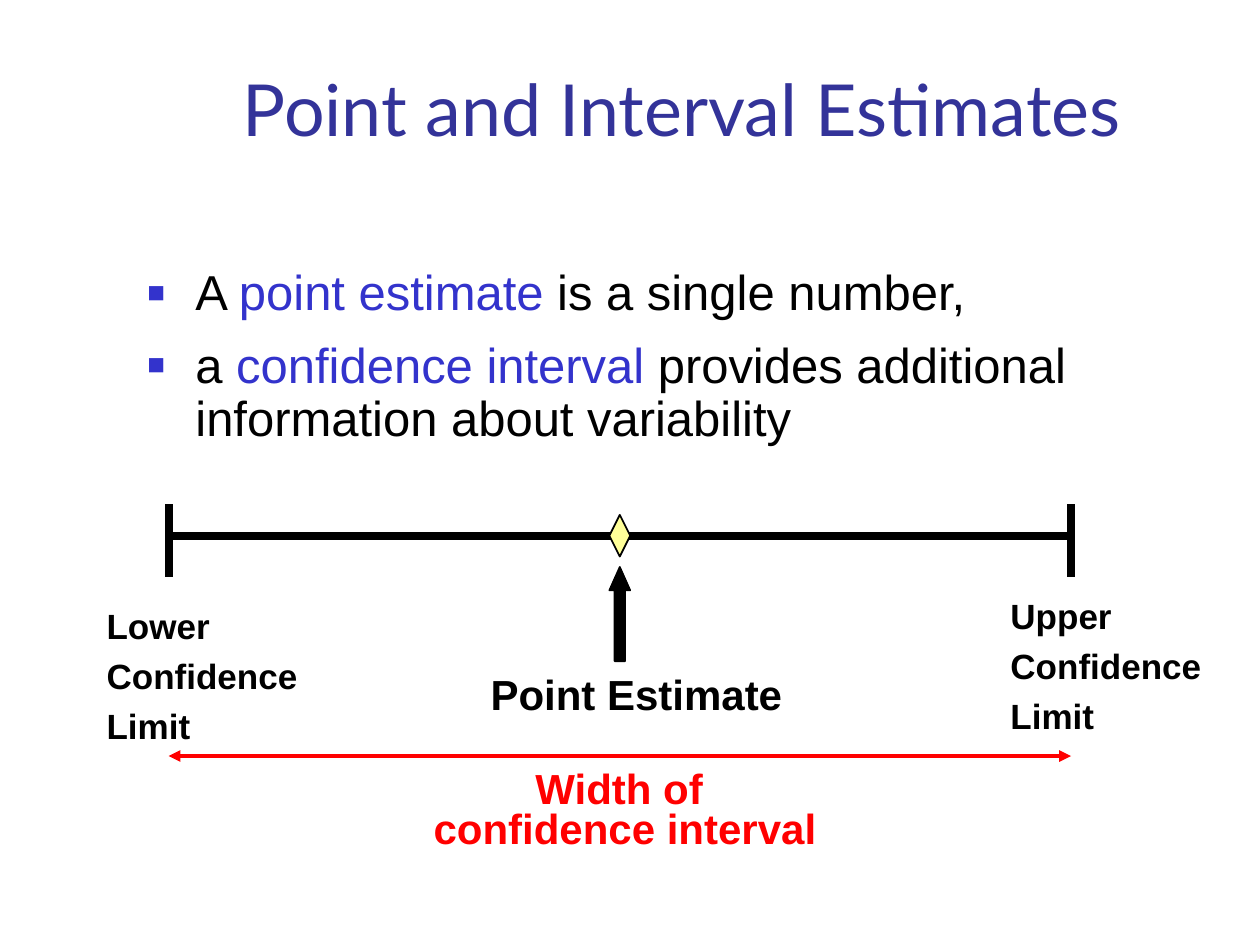
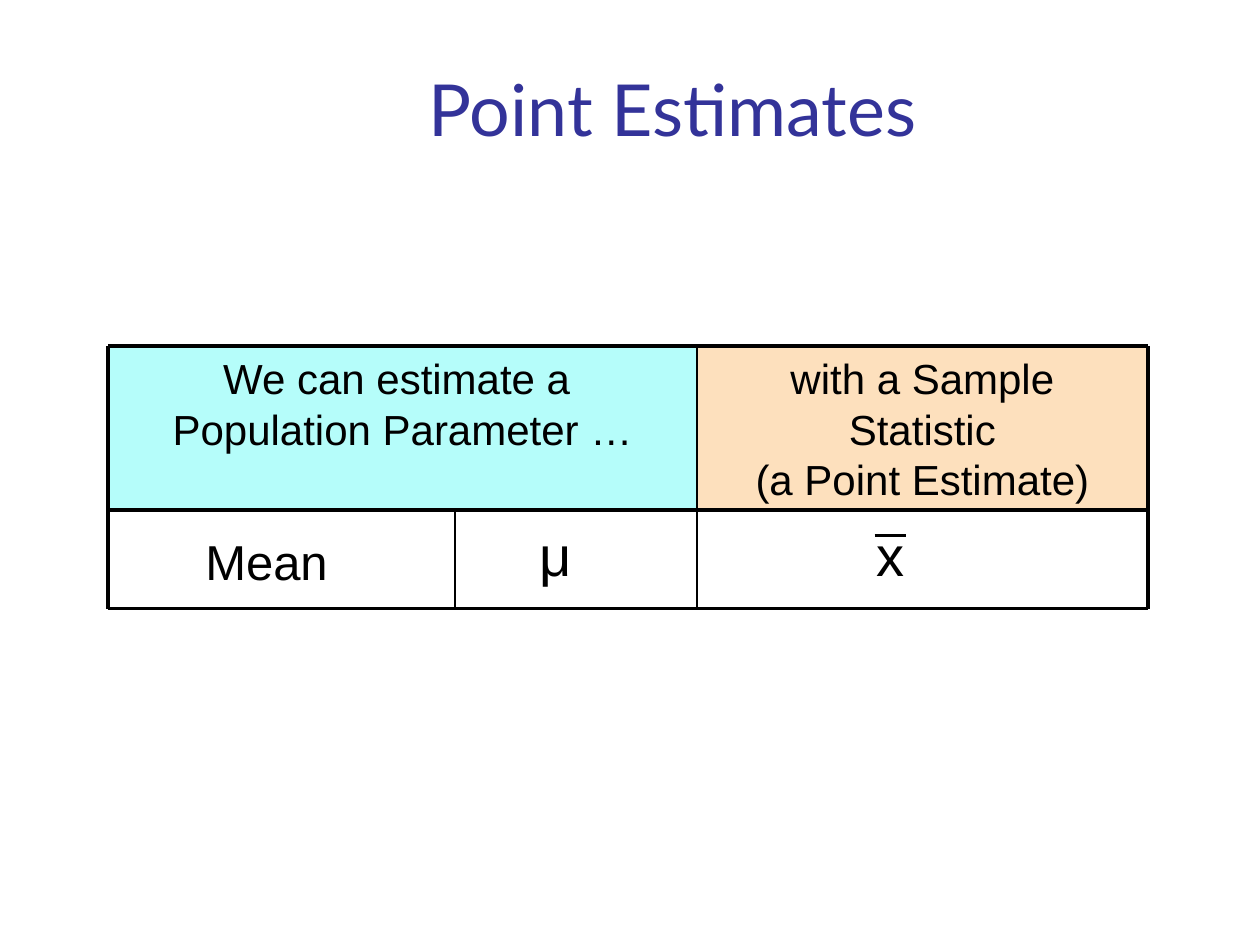
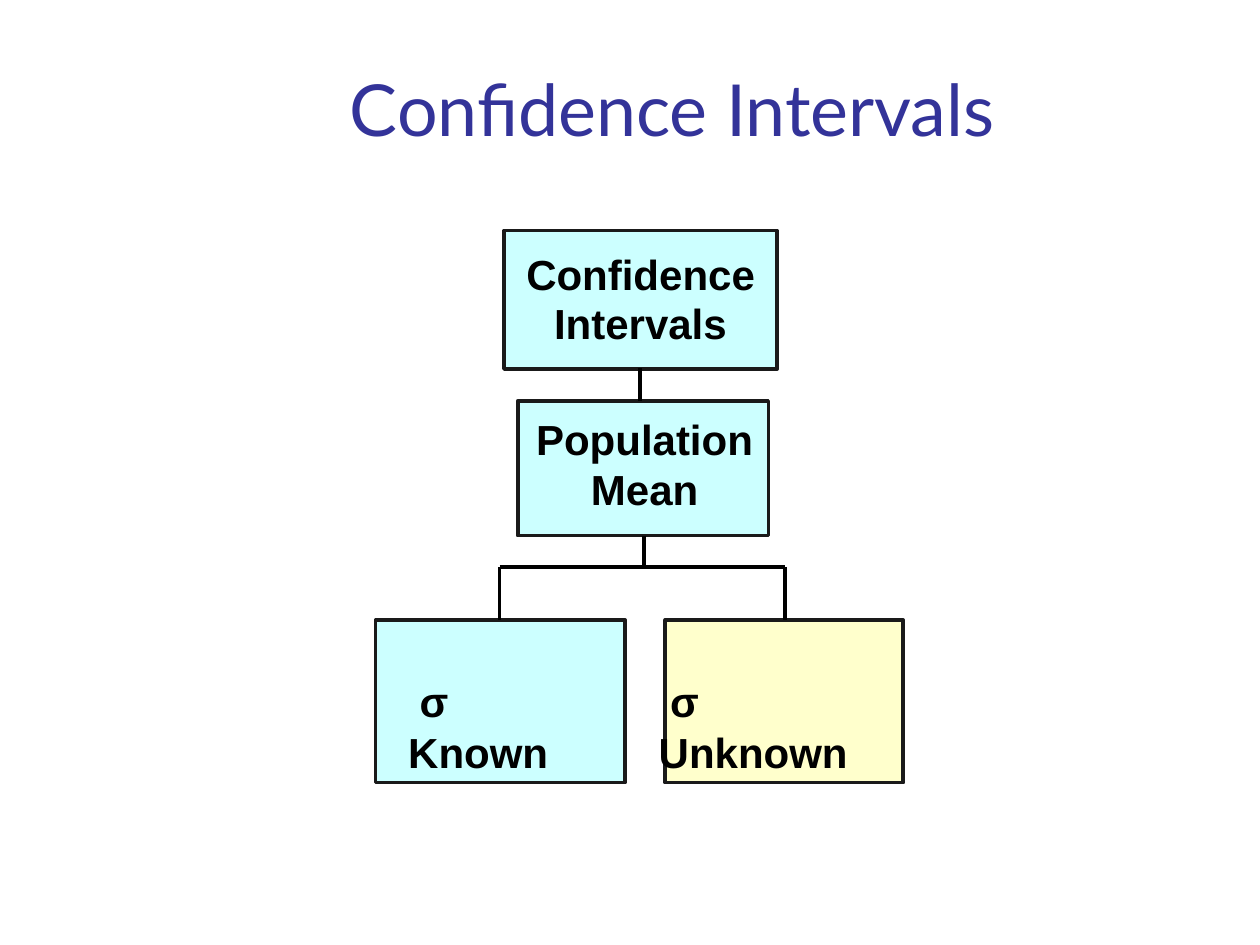
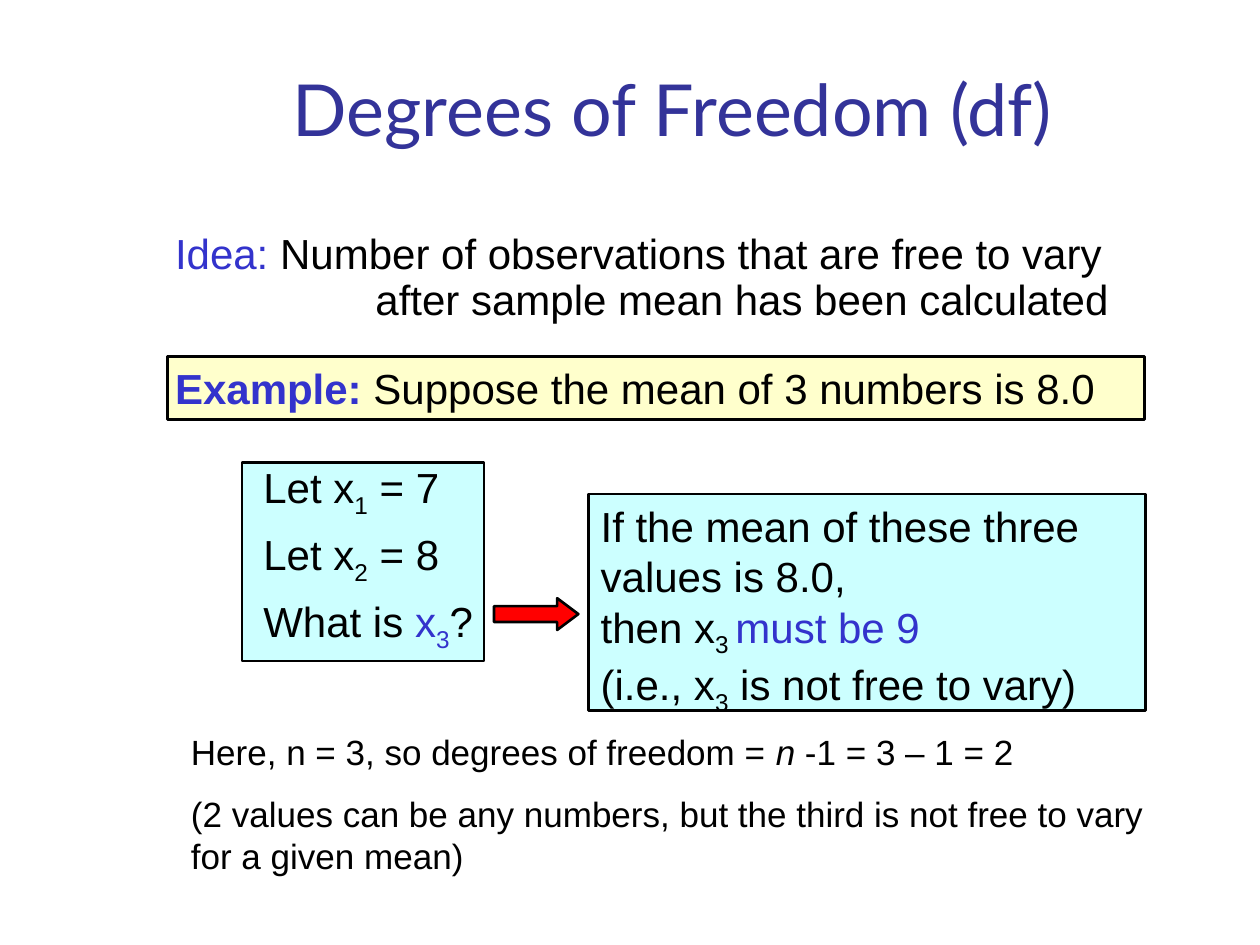
from lxml import etree
from pptx import Presentation
from pptx.dml.color import RGBColor
from pptx.enum.shapes import MSO_CONNECTOR, MSO_SHAPE as SHAPE
from pptx.enum.text import MSO_ANCHOR as ANCHOR, PP_ALIGN as ALIGN
from pptx.oxml.ns import qn
from pptx.util import Cm, Pt

BLACK = RGBColor(0x00, 0x00, 0x00)
CHARCOAL = RGBColor(0x1A, 0x1A, 0x1A)
NAVY = RGBColor(0x33, 0x33, 0x99)
BLUE = RGBColor(0x33, 0x33, 0xCC)
RED = RGBColor(0xFF, 0x00, 0x00)
YELLOW = RGBColor(0xFF, 0xFF, 0x99)
CREAM = RGBColor(0xFF, 0xFF, 0xCC)
CYAN = RGBColor(0xCC, 0xFF, 0xFF)
AQUA = RGBColor(0xB5, 0xFD, 0xFA)
PEACH = RGBColor(0xFD, 0xE0, 0xBD)

BODY_FONT = "Arial"
TITLE_FONT = "Lato"
TIGHT = (0.23, 0.13)
NORMAL = (0.25, 0.13)
TITLE_BOX = (2.74, 1.07, 21.64, 2.11)


def format_run(r, size, color, bold=False, italic=False, font=BODY_FONT, sub=False):
    r.font.name = font
    r.font.size = Pt(size)
    r.font.bold = bold
    r.font.italic = italic
    r.font.color.rgb = color
    if sub:
        r.font._element.set("baseline", "-25000")


def write(tf, paragraphs, size, align=ALIGN.LEFT, before=0, insets=NORMAL, **style):
    style = {"color": BLACK, **style}
    tf.word_wrap = True
    tf.vertical_anchor = ANCHOR.TOP
    tf.margin_left = tf.margin_right = Cm(insets[0])
    tf.margin_top = tf.margin_bottom = Cm(insets[1])
    for i, content in enumerate(paragraphs):
        p = tf.add_paragraph() if i else tf.paragraphs[0]
        p.alignment = align
        if i and before:
            p.space_before = Pt(before)
        if isinstance(content, str):
            p.text = content
            for r in p.runs:
                format_run(r, size, **style)
            continue
        for text, changes in content:
            r = p.add_run()
            r.text = text
            format_run(r, size, **{**style, **changes})
    return tf


def add_text(slide, box, paragraphs, size, **options):
    sp = slide.shapes.add_textbox(*map(Cm, box))
    return write(sp.text_frame, paragraphs, size, **options)


def add_title(slide, text, box=TITLE_BOX):
    tf = add_text(slide, box, [text], 41, align=ALIGN.CENTER, insets=TIGHT,
                  color=NAVY, font=TITLE_FONT)
    tf.vertical_anchor = ANCHOR.BOTTOM


def add_figure(slide, kind, box, fill, line=BLACK, width=1.5, adjustments=()):
    sp = slide.shapes.add_shape(kind, *map(Cm, box))
    sp.shadow.inherit = False
    sp.fill.solid()
    sp.fill.fore_color.rgb = fill
    if line is None:
        sp.line.fill.background()
    else:
        sp.line.color.rgb = line
        sp.line.width = Pt(width)
    for i, value in enumerate(adjustments):
        sp.adjustments[i] = value
    return sp


def add_line(slide, x1, y1, x2, y2, width, color=BLACK, arrows=False):
    line = slide.shapes.add_connector(MSO_CONNECTOR.STRAIGHT, *map(Cm, (x1, y1, x2, y2)))
    line.line.color.rgb = color
    line.line.width = Pt(width)
    if arrows:
        ln = line.line._get_or_add_ln()
        for tag in ("a:headEnd", "a:tailEnd"):
            etree.SubElement(ln, qn(tag), type="triangle")
    etree.SubElement(line._element.spPr, qn("a:effectLst"))


def set_indent(p, left, first=0):
    pPr = p._p.get_or_add_pPr()
    pPr.set("marL", str(Cm(left)))
    pPr.set("indent", str(Cm(first)))
    return pPr


def add_bullet(p):
    pPr = set_indent(p, 0.97, -0.97)
    color = etree.SubElement(pPr, qn("a:buClr"))
    etree.SubElement(color, qn("a:srgbClr"), val=str(BLUE))
    etree.SubElement(pPr, qn("a:buSzPct"), val="60000")
    etree.SubElement(pPr, qn("a:buFont"), typeface=BODY_FONT)
    etree.SubElement(pPr, qn("a:buChar"), char="■")


def build_interval_slide(slide):
    lower, upper, axis_y, width_y = 3.4, 21.59, 10.8, 15.24
    middle = (lower + upper) / 2
    add_title(slide, "Point and Interval Estimates", (4.44, 1.07, 18.62, 2.11))
    blue = {"color": BLUE}
    tf = add_text(slide, (2.74, 5.28, 21.39, 3.61), [
        [("A ", {}), ("point estimate", blue), (" is a single number,", {})],
        [("a ", {}), ("confidence interval", blue),
         (" provides additional information about variability", {})],
    ], 28, insets=TIGHT, before=11.3)
    for p in tf.paragraphs:
        add_bullet(p)
        p.line_spacing = 0.9

    add_line(slide, lower, axis_y, upper, axis_y, 4.5)
    for x in (lower, upper):
        add_line(slide, x, 10.16, x, 11.63, 4.5)
    add_figure(slide, SHAPE.DIAMOND, (middle - 0.21, 10.38, 0.42, 0.84), YELLOW, width=1)
    add_figure(slide, SHAPE.UP_ARROW, (middle - 0.21, 11.43, 0.42, 1.9), BLACK, width=1,
               adjustments=(0.5, 1.125))
    add_text(slide, (7.85, 13.34, 9.96, 1.27), ["Point Estimate"], 24,
             align=ALIGN.CENTER, bold=True)
    for name, x, y in (("Lower", 1.9, 12.06), ("Upper", 20.12, 11.86)):
        add_text(slide, (x, y, 4.75, 3.12), [name, "Confidence", "Limit"], 20,
                 before=4.6, bold=True)
    add_line(slide, lower, width_y, upper, width_y, 2.25, RED, arrows=True)
    tf = add_text(slide, (7.62, width_y, 9.96, 1.88), ["Width of ", "confidence interval"], 24,
                  align=ALIGN.CENTER, before=16, color=RED, bold=True)
    tf.paragraphs[1].line_spacing = 0.1


def build_estimates_slide(slide):
    left, symbol_x, statistic_x, right = 2.18, 9.17, 14.05, 23.14
    top, header_bottom, bottom = 6.98, 10.28, 12.27
    add_title(slide, "Point Estimates")
    headers = (
        (left, statistic_x, AQUA, ["We can estimate a ", "Population Parameter …"]),
        (statistic_x, right, PEACH, ["with a Sample\vStatistic", "(a Point Estimate)"]),
    )
    for x1, x2, fill, paragraphs in headers:
        sp = add_figure(slide, SHAPE.RECTANGLE, (x1, top, x2 - x1, header_bottom - top),
                        fill, line=None)
        write(sp.text_frame, paragraphs, 24, align=ALIGN.CENTER)

    for y in (top, header_bottom, bottom):
        add_line(slide, left, y, right, y, 2)
    for x, y, width in ((left, top, 2.25), (symbol_x, header_bottom, 1.5),
                        (statistic_x, top, 1.5), (right, top, 2.25)):
        add_line(slide, x, y, x, bottom, width)
    add_text(slide, (3.89, 10.59, 3.3, 1.42), ["Mean"], 28)
    add_text(slide, (10.36, 10.36, 1.7, 1.6), ["μ"], 32, align=ALIGN.CENTER)
    add_text(slide, (17.42, 10.36, 1.3, 1.6), ["x"], 32)
    add_line(slide, 17.63, 10.8, 18.26, 10.8, 1.5)


def build_tree_slide(slide):
    fork_y, leaf_y = 11.43, 12.5
    known_x, unknown_x = 10.07, 15.82
    add_title(slide, "Confidence Intervals")
    nodes = (
        ((10.16, 4.65, 5.51, 2.79), CYAN),
        ((10.44, 8.08, 5.05, 2.72), CYAN),
        ((7.57, leaf_y, 5.03, 3.28), CYAN),
        ((13.41, leaf_y, 4.8, 3.28), CREAM),
    )
    for box, fill in nodes:
        add_figure(slide, SHAPE.RECTANGLE, box, fill, CHARCOAL, 2)

    add_text(slide, (10.36, 4.88, 5.4, 1.27), ["Confidence"], 24, bold=True)
    add_text(slide, (10.92, 5.87, 4.3, 1.27), ["Intervals"], 24, bold=True)
    add_text(slide, (10.44, 8.2, 5.11, 2.29), ["Population", "Mean"], 24,
             align=ALIGN.CENTER, bold=True)
    for x, width, label in ((7.98, 4.37, "σ\vKnown"), (13.03, 5.36, "σ\vUnknown")):
        tf = add_text(slide, (x, 13.49, width, 1.27), [label], 24, bold=True)
        set_indent(tf.paragraphs[0], 0, 0.23)

    for x1, y1, x2, y2 in (
        (12.91, 7.42, 12.91, 8.08),
        (12.98, 10.8, 12.98, fork_y),
        (known_x, fork_y, unknown_x, fork_y),
        (known_x, fork_y, known_x, leaf_y),
        (unknown_x, fork_y, unknown_x, leaf_y),
    ):
        add_line(slide, x1, y1, x2, y2, 2.25)


def build_freedom_slide(slide):
    blue, sub = {"color": BLUE}, {"sub": True}
    sp = add_figure(slide, SHAPE.RECTANGLE, (11.86, 9.96, 11.23, 4.37), CYAN)
    write(sp.text_frame, [
        "If the mean of these three values is 8.0,",
        [("then x", {}), ("3 ", sub), ("must be 9", blue)],
        [("(i.e., x", {}), ("3", sub), (" is not free to vary)", {})],
    ], 24)
    add_figure(slide, SHAPE.RECTANGLE, (4.88, 9.32, 4.88, 4.01), CYAN)
    add_figure(slide, SHAPE.RECTANGLE, (3.38, 7.19, 19.69, 1.27), CREAM)
    add_title(slide, "Degrees of Freedom (df)")

    tf = add_text(slide, (2.11, 4.45, 22.43, 9.53), [
        [("Idea:", blue), (" Number of observations that are free to vary", {})],
        "after sample mean has been calculated",
        [("Example: ", {**blue, "bold": True}), ("Suppose the mean of 3 numbers is 8.0", {})],
        [("Let x", {}), ("1", sub), (" = 7", {})],
        [("Let x", {}), ("2", sub), (" = 8", {})],
        [("What is", {}), (" x", blue), ("3", {**blue, **sub}), ("?", {})],
    ], 24, insets=TIGHT, before=5.5)
    for p, left in zip(tf.paragraphs, (1.19, 5.23, 1.19, 2.97, 2.97, 2.97)):
        set_indent(p, left)
    idea_end, example, first_value = tf.paragraphs[1:4]
    idea_end.line_spacing = 0.7
    example.line_spacing = 1.6
    first_value.space_before = Pt(28)

    add_text(slide, (3.6, 14.6, 20.52, 3.2), [
        [("Here, n = 3, so degrees of freedom = ", {}), ("n", {"italic": True}),
         (" -1 = 3 – 1 = 2", {})],
        "(2 values can be any numbers, but the third is not free to vary for a given mean)",
    ], 20, before=11.5)
    add_figure(slide, SHAPE.RIGHT_ARROW, (9.96, 12.06, 1.7, 0.64), RED,
               adjustments=(0.5, 0.667))


def main():
    prs = Presentation()
    prs.slide_width, prs.slide_height = Cm(25.4), Cm(19.05)
    for build in (build_interval_slide, build_estimates_slide,
                  build_tree_slide, build_freedom_slide):
        build(prs.slides.add_slide(prs.slide_layouts[6]))
    prs.save("out.pptx")


if __name__ == "__main__":
    main()
